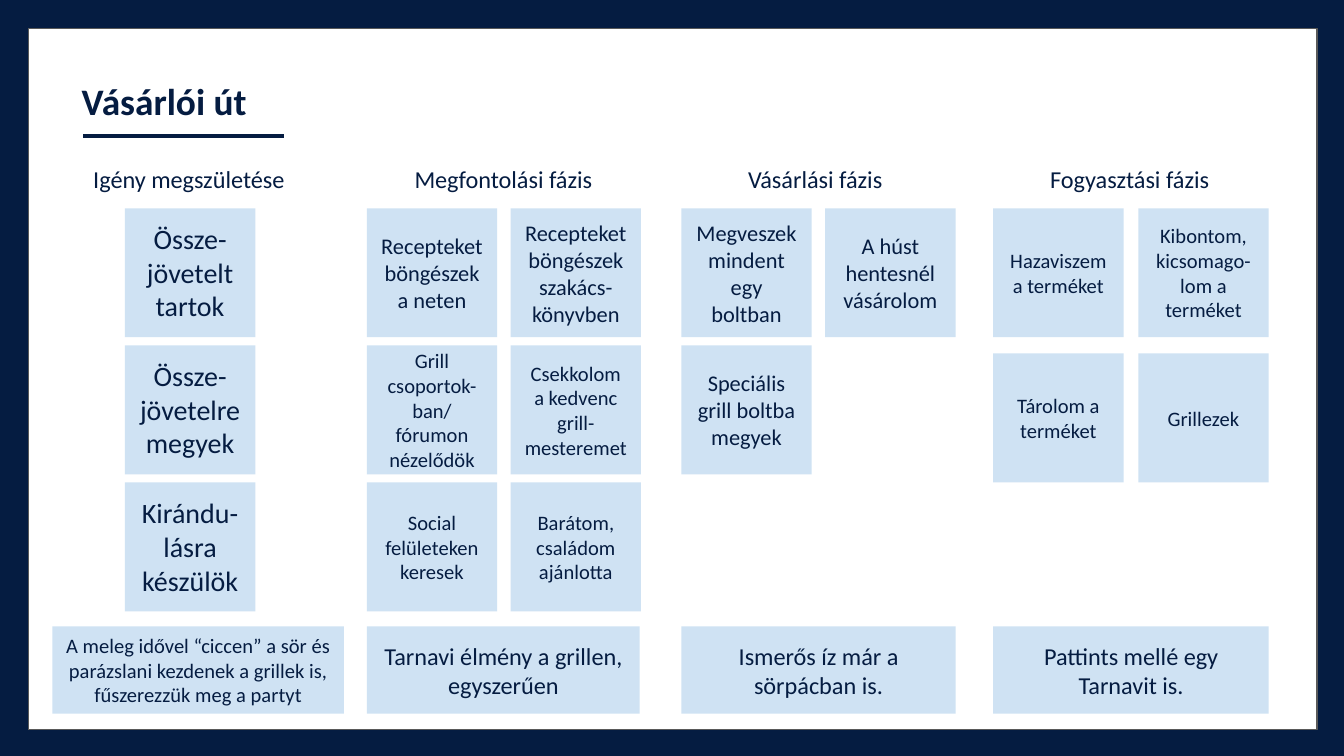
from dataclasses import dataclass

from lxml.etree import SubElement
from pptx import Presentation
from pptx.dml.color import RGBColor
from pptx.enum.shapes import MSO_CONNECTOR, MSO_SHAPE
from pptx.enum.text import MSO_ANCHOR, PP_ALIGN
from pptx.oxml.ns import qn
from pptx.util import Inches, Pt


@dataclass(frozen=True)
class Theme:
    navy: RGBColor = RGBColor(0x05, 0x1C, 0x41)
    pale: RGBColor = RGBColor(0xCF, 0xE2, 0xF3)
    white: RGBColor = RGBColor(0xFF, 0xFF, 0xFF)
    gray: RGBColor = RGBColor(0x59, 0x59, 0x59)
    font: str = "Calibri"
    title: float = 20
    head: float = 13
    large: float = 15
    medium: float = 12
    small: float = 11


@dataclass(frozen=True)
class Box:
    left: float
    top: float
    width: float
    height: float


@dataclass(frozen=True)
class Card:
    col: int
    row: int
    text: str
    size: float


@dataclass(frozen=True)
class Phase:
    title: str
    head: Box
    left: float
    step: float
    pitch: float
    cards: tuple[Card, ...]
    foot: Box
    slogan: str
    size: float
    anchor: MSO_ANCHOR = MSO_ANCHOR.MIDDLE


THEME = Theme()
TOP, HEAD_TOP, FOOT_TOP = 1.55, 1.12, 4.66
CARD_W, CARD_H = 0.97, 0.96
HEAD_H, FOOT_H = 0.42, 0.65


def head(left: float, width: float) -> Box:
    return Box(left, HEAD_TOP, width, HEAD_H)


def foot(left: float, width: float) -> Box:
    return Box(left, FOOT_TOP, width, FOOT_H)


PHASES = (
    Phase("Igény megszületése", head(0.29, 2.23), 0.93, 0, 1.02, (
        Card(0, 0, "Össze-\njövetelt tartok", THEME.large),
        Card(0, 1, "Össze-\njövetelre megyek", THEME.large),
        Card(0, 2, "Kirándu-\nlásra\nkészülök", THEME.large),
    ), foot(0.39, 2.17),
        "A meleg idővel “ciccen” a sör és parázslani kezdenek a grillek is, "
        "fűszerezzük meg a partyt", THEME.small, MSO_ANCHOR.TOP),
    Phase("Megfontolási fázis", head(2.73, 2.03), 2.73, 1.07, 1.02, (
        Card(0, 0, "Recepteket böngészek a neten", THEME.medium),
        Card(1, 0, "Recepteket böngészek szakács-\nkönyvben", THEME.medium),
        Card(0, 1, "Grill csoportok-\nban/fórumon nézelődök", THEME.small),
        Card(1, 1, "Csekkolom a kedvenc grill-\nmesteremet", THEME.small),
        Card(0, 2, "Social felületeken keresek", THEME.small),
        Card(1, 2, "Barátom, családom\najánlotta", THEME.small),
    ), foot(2.73, 2.03), "Tarnavi élmény a grillen, egyszerűen", THEME.head),
    Phase("Vásárlási fázis", head(5.05, 2.03), 5.07, 1.07, 1.02, (
        Card(0, 0, "Megveszek mindent egy boltban", THEME.medium),
        Card(1, 0, "A húst hentesnél vásárolom", THEME.medium),
        Card(0, 1, "Speciális grill boltba megyek", THEME.medium),
    ), foot(5.07, 2.04), "Ismerős íz már a sörpácban is.", THEME.head),
    Phase("Fogyasztási fázis", head(7.39, 2.03), 7.39, 1.08, 1.08, (
        Card(0, 0, "Hazaviszem a terméket", THEME.small),
        Card(1, 0, "Kibontom, kicsomago-\nlom a terméket", THEME.small),
        Card(0, 1, "Tárolom a terméket", THEME.small),
        Card(1, 1, "Grillezek", THEME.small),
    ), foot(7.39, 2.05), "Pattints mellé egy Tarnavit is.", THEME.head),
)


def place(box: Box) -> tuple:
    return tuple(Inches(n) for n in (box.left, box.top, box.width, box.height))


def write(shape, text: str, size: float, align=PP_ALIGN.CENTER,
          anchor=MSO_ANCHOR.TOP, bold: bool = False) -> None:
    frame = shape.text_frame
    frame.word_wrap = True
    frame.vertical_anchor = anchor
    frame.margin_left = frame.margin_right = Inches(0.1)
    frame.margin_top = frame.margin_bottom = Inches(0.1)
    frame.text = text
    for para in frame.paragraphs:
        para.alignment = align
        font = para.font
        font.name, font.size, font.bold = THEME.font, Pt(size), bold
        font.color.rgb = THEME.navy


def panel(slide, box: Box, fill: RGBColor):
    shape = slide.shapes.add_shape(MSO_SHAPE.RECTANGLE, *place(box))
    shape.shadow.inherit = False
    shape.fill.solid()
    shape.fill.fore_color.rgb = fill
    shape.line.fill.background()
    return shape


def tile(slide, box: Box, text: str, size: float, anchor=MSO_ANCHOR.MIDDLE) -> None:
    write(panel(slide, box, THEME.pale), text, size, anchor=anchor)


def label(slide, box: Box, text: str, size: float, **style) -> None:
    write(slide.shapes.add_textbox(*place(box)), text, size, **style)


def rule(slide, left: float, right: float, top: float) -> None:
    line = slide.shapes.add_connector(
        MSO_CONNECTOR.STRAIGHT, Inches(left), Inches(top), Inches(right), Inches(top))
    line.line.color.rgb = THEME.navy
    line.line.width = Pt(2.25)
    SubElement(line._element.spPr, qn("a:effectLst"))


def column(slide, phase: Phase) -> None:
    label(slide, phase.head, phase.title, THEME.head)
    for card in phase.cards:
        box = Box(phase.left + card.col * phase.step,
                  TOP + card.row * phase.pitch, CARD_W, CARD_H)
        tile(slide, box, card.text, card.size, phase.anchor)
    tile(slide, phase.foot, phase.slogan, phase.size)


def main() -> None:
    deck = Presentation()
    deck.slide_width, deck.slide_height = Inches(10), Inches(10 * 9 / 16)
    slide = deck.slides.add_slide(deck.slide_layouts[6])
    slide.background.fill.solid()
    slide.background.fill.fore_color.rgb = THEME.navy
    page = panel(slide, Box(0.21, 0.21, 9.59, 5.22), THEME.white)
    page.line.color.rgb = THEME.gray
    page.line.width = Pt(0.75)
    label(slide, Box(0.51, 0.48, 4.57, 0.54), "Vásárlói út", THEME.title,
          align=PP_ALIGN.LEFT, bold=True)
    rule(slide, 0.62, 2.11, 1.01)
    for phase in PHASES:
        column(slide, phase)
    deck.save("out.pptx")


if __name__ == "__main__":
    main()
